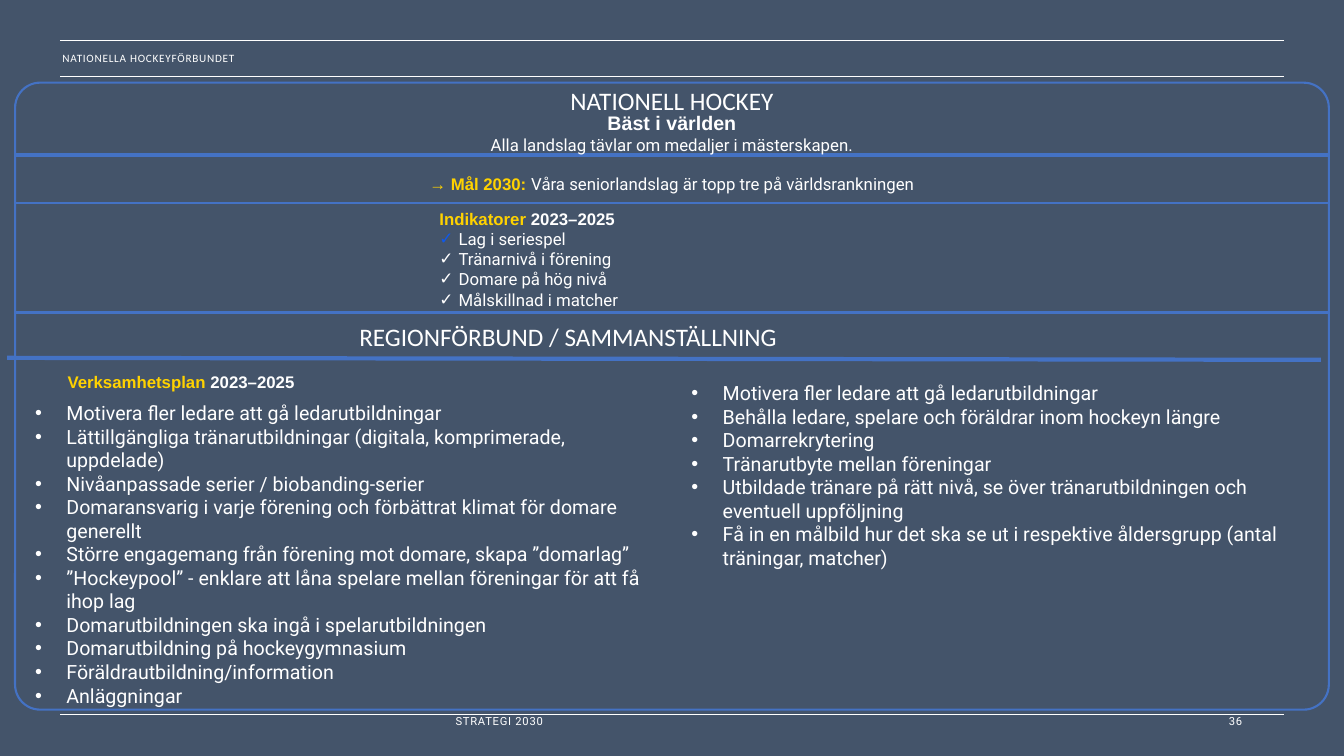
from dataclasses import dataclass

from lxml import etree
from pptx import Presentation
from pptx.dml.color import RGBColor
from pptx.enum.shapes import MSO_CONNECTOR, MSO_SHAPE
from pptx.enum.text import MSO_ANCHOR, PP_ALIGN
from pptx.oxml.ns import qn
from pptx.slide import Slide
from pptx.util import Inches, Pt

LEFT, CENTER, RIGHT = PP_ALIGN.LEFT, PP_ALIGN.CENTER, PP_ALIGN.RIGHT
TOP, MIDDLE = MSO_ANCHOR.TOP, MSO_ANCHOR.MIDDLE
STRAIGHT = MSO_CONNECTOR.STRAIGHT
ROUNDED = MSO_SHAPE.ROUNDED_RECTANGLE


@dataclass(frozen=True)
class Theme:
    back: str = "44546A"
    white: str = "FFFFFF"
    blue: str = "4472C4"
    tick: str = "0F59EB"
    gold: str = "FFD200"
    tiny: int = 8
    small: int = 12
    body: int = 14
    head: int = 18
    title: str = "Calibri"
    strong: str = "Arial"
    text: str = "Roboto"


THEME = Theme()


@dataclass(frozen=True)
class Run:
    text: str
    size: int = THEME.small
    font: str = THEME.text
    color: str = THEME.white
    bold: bool = False
    track: float = 0


@dataclass(frozen=True)
class Para:
    runs: tuple[Run, ...]
    align: PP_ALIGN = LEFT
    before: int = 0
    bullet: str = ""
    indent: float = 0
    tint: str = THEME.white


@dataclass(frozen=True)
class Box:
    left: float
    top: float
    width: float
    height: float
    paras: tuple[Para, ...]
    anchor: MSO_ANCHOR = TOP
    inset: bool = True


@dataclass(frozen=True)
class Rule:
    x1: float
    y1: float
    x2: float
    y2: float
    color: str
    weight: float


def rgb(code: str) -> RGBColor:
    return RGBColor.from_string(code)


def add_rule(slide: Slide, rule: Rule) -> None:
    line = slide.shapes.add_connector(
        STRAIGHT, Inches(rule.x1), Inches(rule.y1), Inches(rule.x2), Inches(rule.y2))
    line.line.color.rgb = rgb(rule.color)
    line.line.width = Pt(rule.weight)
    etree.SubElement(line._element.spPr, qn("a:effectLst"))


def add_frame(slide: Slide) -> None:
    frame = slide.shapes.add_shape(
        ROUNDED, Inches(0.15), Inches(0.82), Inches(13.03), Inches(6.22))
    frame.adjustments[0] = 0.04
    frame.shadow.inherit = False
    frame.fill.background()
    frame.line.color.rgb = rgb(THEME.blue)
    frame.line.width = Pt(1.5)


def set_bullet(props: etree._Element, para: Para) -> None:
    """Give a paragraph its hanging indent, mark and mark colour."""
    props.set("marL", str(Inches(para.indent)))
    props.set("indent", str(-Inches(para.indent)))
    tint = etree.SubElement(props, qn("a:buClr"))
    etree.SubElement(tint, qn("a:srgbClr"), val=para.tint)
    etree.SubElement(props, qn("a:buFont"), typeface=THEME.strong)
    etree.SubElement(props, qn("a:buChar"), char=para.bullet)


def add_box(slide: Slide, box: Box) -> None:
    shape = slide.shapes.add_textbox(
        Inches(box.left), Inches(box.top), Inches(box.width), Inches(box.height))
    frame = shape.text_frame
    frame.word_wrap = True
    frame.vertical_anchor = box.anchor
    if not box.inset:
        frame.margin_left = frame.margin_right = 0
        frame.margin_top = frame.margin_bottom = 0
    for i, para in enumerate(box.paras):
        item = frame.add_paragraph() if i else frame.paragraphs[0]
        item.alignment = para.align
        item.space_before = Pt(para.before)
        if para.bullet:
            set_bullet(item._p.get_or_add_pPr(), para)
        for run in para.runs:
            part = item.add_run()
            part.text = run.text
            part.font.size = Pt(run.size)
            part.font.name = run.font
            part.font.bold = run.bold
            part.font.color.rgb = rgb(run.color)
            if run.track:
                part._r.get_or_add_rPr().set("spc", str(int(run.track * 100)))


def label(text: str, font: str = THEME.text, align: PP_ALIGN = LEFT) -> tuple[Para, ...]:
    return (Para((Run(text, THEME.tiny, font, track=0.5),), align),)


def heading(text: str) -> tuple[Para, ...]:
    return (Para((Run(text, THEME.head, THEME.title),), CENTER),)


def period(text: str) -> Para:
    """Gold lead word followed by the plan years."""
    return Para((Run(text, font=THEME.strong, color=THEME.gold, bold=True),
                 Run("2023–2025", font=THEME.strong, bold=True)))


def points(items: tuple[str, ...]) -> tuple[Para, ...]:
    return tuple(Para((Run(item, THEME.body),), bullet="•", indent=0.31) for item in items)


SIGNS = ("Lag i seriespel", "Tränarnivå i förening",
         "Domare på hög nivå", "Målskillnad i matcher")
PLAN = (
    "Motivera fler ledare att gå ledarutbildningar",
    "Lättillgängliga tränarutbildningar (digitala, komprimerade, uppdelade)",
    "Nivåanpassade serier / biobanding-serier",
    "Domaransvarig i varje förening och förbättrat klimat för domare generellt",
    "Större engagemang från förening mot domare, skapa ”domarlag”",
    "”Hockeypool” - enklare att låna spelare mellan föreningar för att få ihop lag",
    "Domarutbildningen ska ingå i spelarutbildningen",
    "Domarutbildning på hockeygymnasium",
    "Föräldrautbildning/information",
    "Anläggningar",
)
MORE = (
    "Motivera fler ledare att gå ledarutbildningar",
    "Behålla ledare, spelare och föräldrar inom hockeyn längre",
    "Domarrekrytering",
    "Tränarutbyte mellan föreningar",
    "Utbildade tränare på rätt nivå, se över tränarutbildningen och eventuell uppföljning",
    "Få in en målbild hur det ska se ut i respektive åldersgrupp (antal träningar, matcher)",
)
VISION = (
    Para((Run("Bäst i världen", THEME.body, THEME.strong, bold=True),), CENTER),
    Para((Run("Alla landslag tävlar om medaljer i mästerskapen."),), CENTER),
    Para((Run("→ Mål 2030: ", font=THEME.strong, color=THEME.gold, bold=True),
          Run("Våra seniorlandslag är topp tre på världsrankningen")), CENTER, before=14),
)
TICKS = tuple(
    Para((Run(sign),), bullet="✓", indent=0.19, tint=THEME.white if i else THEME.tick)
    for i, sign in enumerate(SIGNS))

RULES = (
    *(Rule(0.6, y, 12.73, y, THEME.white, 1) for y in (0.4, 0.76, 7.09)),
    *(Rule(13.18, y, 0.15, y, THEME.blue, weight)
      for y, weight in ((1.54, 3), (2.01, 1.5), (3.1, 1.5))),
    Rule(13.1, 3.57, 0.07, 3.55, THEME.blue, 3),
)
BOXES = (
    Box(0.62, 0.4, 3.36, 0.35, label("NATIONELLA HOCKEYFÖRBUNDET", THEME.title), MIDDLE, False),
    Box(4.42, 6.95, 4.5, 0.4, label("STRATEGI 2030"), MIDDLE),
    Box(9.42, 6.95, 3, 0.4, label("36", align=RIGHT), MIDDLE),
    Box(2.3, 3.14, 6.67, 0.71, heading("REGIONFÖRBUND / SAMMANSTÄLLNING")),
    Box(3.33, 0.8, 6.67, 0.4, heading("NATIONELL HOCKEY")),
    Box(0.67, 3.69, 3.23, 2.81, (period("Verksamhetsplan "),), inset=False),
    Box(0.15, 1.05, 13.03, 0.94, VISION),
    Box(4.26, 2.02, 4.33, 1.11, (period("Indikatorer "), *TICKS)),
    Box(0.25, 3.93, 6.42, 3.2, points(PLAN)),
    Box(6.76, 3.73, 6.22, 3.03, points(MORE)),
)


def main() -> None:
    deck = Presentation()
    deck.slide_width, deck.slide_height = Inches(13.33), Inches(7.5)
    slide = deck.slides.add_slide(deck.slide_layouts[6])
    slide.background.fill.solid()
    slide.background.fill.fore_color.rgb = rgb(THEME.back)
    add_frame(slide)
    for rule in RULES:
        add_rule(slide, rule)
    for box in BOXES:
        add_box(slide, box)
    deck.save("out.pptx")


if __name__ == "__main__":
    main()
